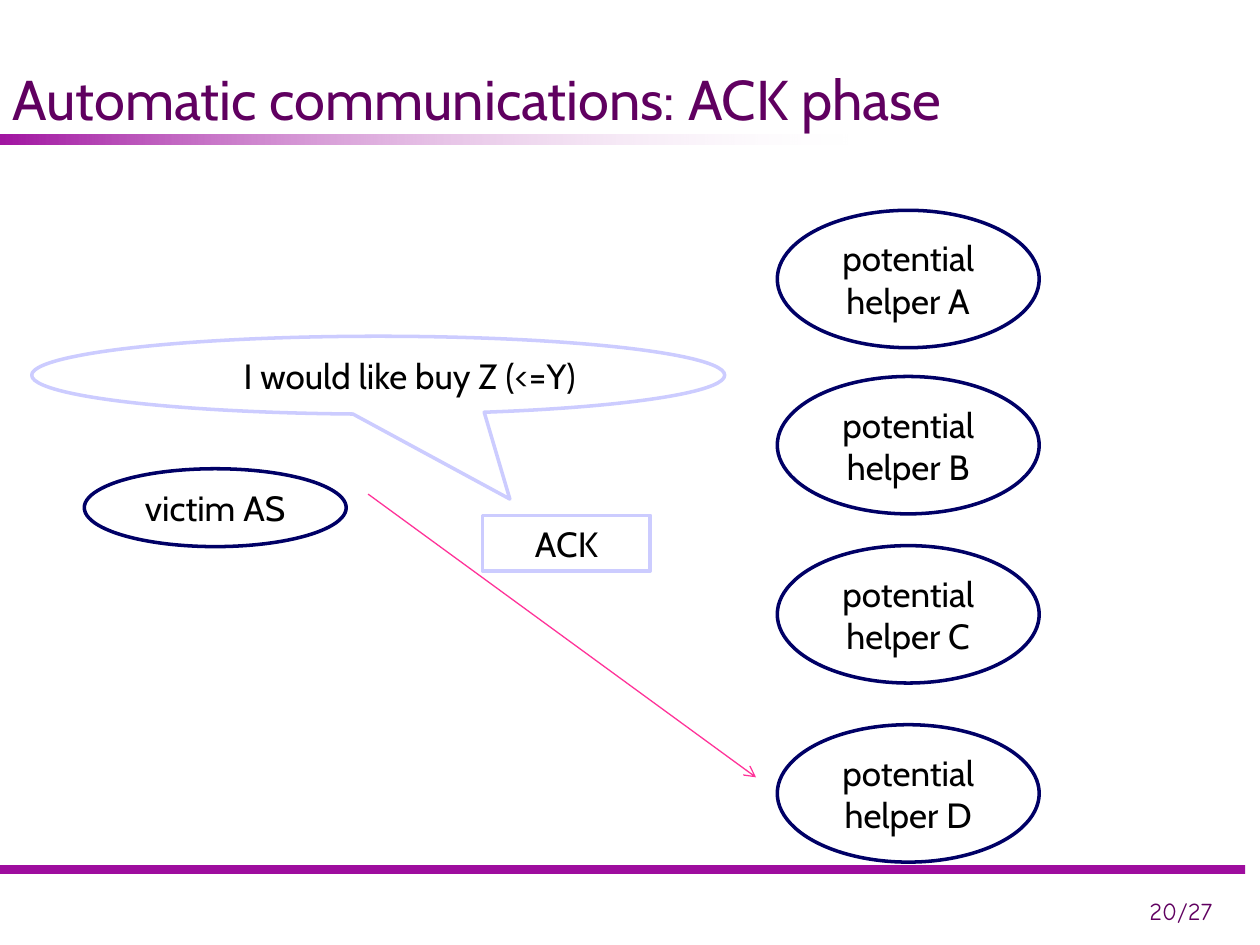
"""Build the slide on the ACK phase of automatic communications."""
from dataclasses import dataclass

from lxml import etree
from pptx import Presentation
from pptx.dml.color import RGBColor
from pptx.enum.shapes import MSO_CONNECTOR, MSO_SHAPE
from pptx.enum.text import MSO_ANCHOR, MSO_AUTO_SIZE, PP_ALIGN
from pptx.oxml.ns import qn
from pptx.util import Cm, Pt

OVAL = MSO_SHAPE.OVAL
RECTANGLE = MSO_SHAPE.RECTANGLE
CALLOUT = MSO_SHAPE.OVAL_CALLOUT
STRAIGHT = MSO_CONNECTOR.STRAIGHT
MIDDLE, BOTTOM, TOP = MSO_ANCHOR.MIDDLE, MSO_ANCHOR.BOTTOM, MSO_ANCHOR.TOP
FIT_SHAPE, NO_FIT = MSO_AUTO_SIZE.SHAPE_TO_FIT_TEXT, MSO_AUTO_SIZE.NONE
LEFT, CENTER, RIGHT = PP_ALIGN.LEFT, PP_ALIGN.CENTER, PP_ALIGN.RIGHT


@dataclass(frozen=True)
class Theme:
    purple: RGBColor = RGBColor.from_string("990099")
    plum: RGBColor = RGBColor.from_string("600060")
    navy: RGBColor = RGBColor.from_string("000066")
    lavender: RGBColor = RGBColor.from_string("CCCCFF")
    pink: RGBColor = RGBColor.from_string("FF3399")
    white: RGBColor = RGBColor.from_string("FFFFFF")
    black: RGBColor = RGBColor.from_string("000000")
    title_size: Pt = Pt(32)
    label_size: Pt = Pt(20)
    number_size: Pt = Pt(14)
    font: str = "Cabin"
    number_font: str = "Comic Neue"


theme = Theme()


def write(box, text, align, frame_format, font_format, color):
    frame = box.text_frame
    for name, value in frame_format.items():
        setattr(frame, name, value)
    paragraph = frame.paragraphs[0]
    paragraph.alignment = align
    span = paragraph.add_run()
    span.text = text
    for name, value in font_format.items():
        setattr(span.font, name, value)
    span.font.color.rgb = color
    return paragraph


def draw_line(page, start, end, color, width):
    line = page.shapes.add_connector(STRAIGHT, *map(Cm, start + end))
    line.line.color.rgb = color
    line.line.width = Pt(width)
    etree.SubElement(line._element.spPr, qn("a:effectLst"))
    return line


deck = Presentation()
deck.slide_width, deck.slide_height = Cm(25.4), Cm(19.05)
page = deck.slides.add_slide(deck.slide_layouts[5])

footer_rule = draw_line(page, (0, 17.53), (25.1, 17.53), theme.purple, 5)
title_rule = page.shapes.add_shape(RECTANGLE, Cm(0), Cm(2.72), Cm(17.09), Cm(0.2))
title_rule.shadow.inherit = False
title_rule.line.fill.background()
title_rule.fill.gradient()
title_rule.fill.gradient_angle = 0
for stop, color in zip(title_rule.fill.gradient_stops, (theme.purple, theme.white)):
    stop.color.rgb = color

rule_colors = [
    color
    for rule in (footer_rule, title_rule)
    for color in rule._element.spPr.iter(qn("a:srgbClr"))
]
for color, opacity in zip(rule_colors, (94, 92, 10)):
    etree.SubElement(color, qn("a:alpha"), val=str(opacity * 1000))

page_number = page.shapes.add_textbox(Cm(21.89), Cm(17.93), Cm(2.8), Cm(0.61))
write(page_number, "20/27", RIGHT,
      {"word_wrap": True, "vertical_anchor": TOP},
      {"name": theme.number_font, "size": theme.number_size}, theme.plum)

title = page.shapes.title
title_place = {"left": Cm(0), "top": Cm(0.53), "width": Cm(25.4), "height": Cm(2.26)}
for name, value in title_place.items():
    setattr(title, name, value)
write(title, "Automatic communications: ACK phase", LEFT,
      {"word_wrap": True, "vertical_anchor": BOTTOM, "auto_size": NO_FIT},
      {"name": theme.font, "size": theme.title_size}, theme.plum)

arrow = draw_line(page, (7.42, 9.96), (15.24, 15.67), theme.pink, 0.75)
etree.SubElement(arrow.line._get_or_add_ln(), qn("a:tailEnd"), type="arrow")

helper_tops = {"A": 4.24, "B": 7.59, "C": 11, "D": 14.61}
nodes = [(OVAL, "victim AS", (1.7, 9.45, 5.28, 1.57), theme.navy)]
nodes += [
    (OVAL, f"potential helper {letter}", (15.67, top, 5.28, 2.77), theme.navy)
    for letter, top in helper_tops.items()
]
nodes += [
    (CALLOUT, "I would like buy Z (<=Y)", (0.64, 6.78, 13.97, 1.57), theme.lavender),
    (RECTANGLE, "ACK", (9.73, 10.39, 3.38, 1.12), theme.lavender),
]
for kind, text, place, outline in nodes:
    node = page.shapes.add_shape(kind, *map(Cm, place))
    node.shadow.inherit = False
    node.fill.solid()
    node.fill.fore_color.rgb = theme.white
    node.line.color.rgb = outline
    node.line.width = Pt(2)
    paragraph = write(node, text, CENTER,
                      {"word_wrap": True, "vertical_anchor": MIDDLE, "auto_size": FIT_SHAPE},
                      {"name": theme.font, "size": theme.label_size}, theme.black)
    if kind == CALLOUT:
        node.adjustments[0], node.adjustments[1] = 0.19, 1.59
        paragraph.level = 1
        paragraph._p.get_or_add_pPr().set("marL", str(Cm(1.27)))

deck.save("out.pptx")
